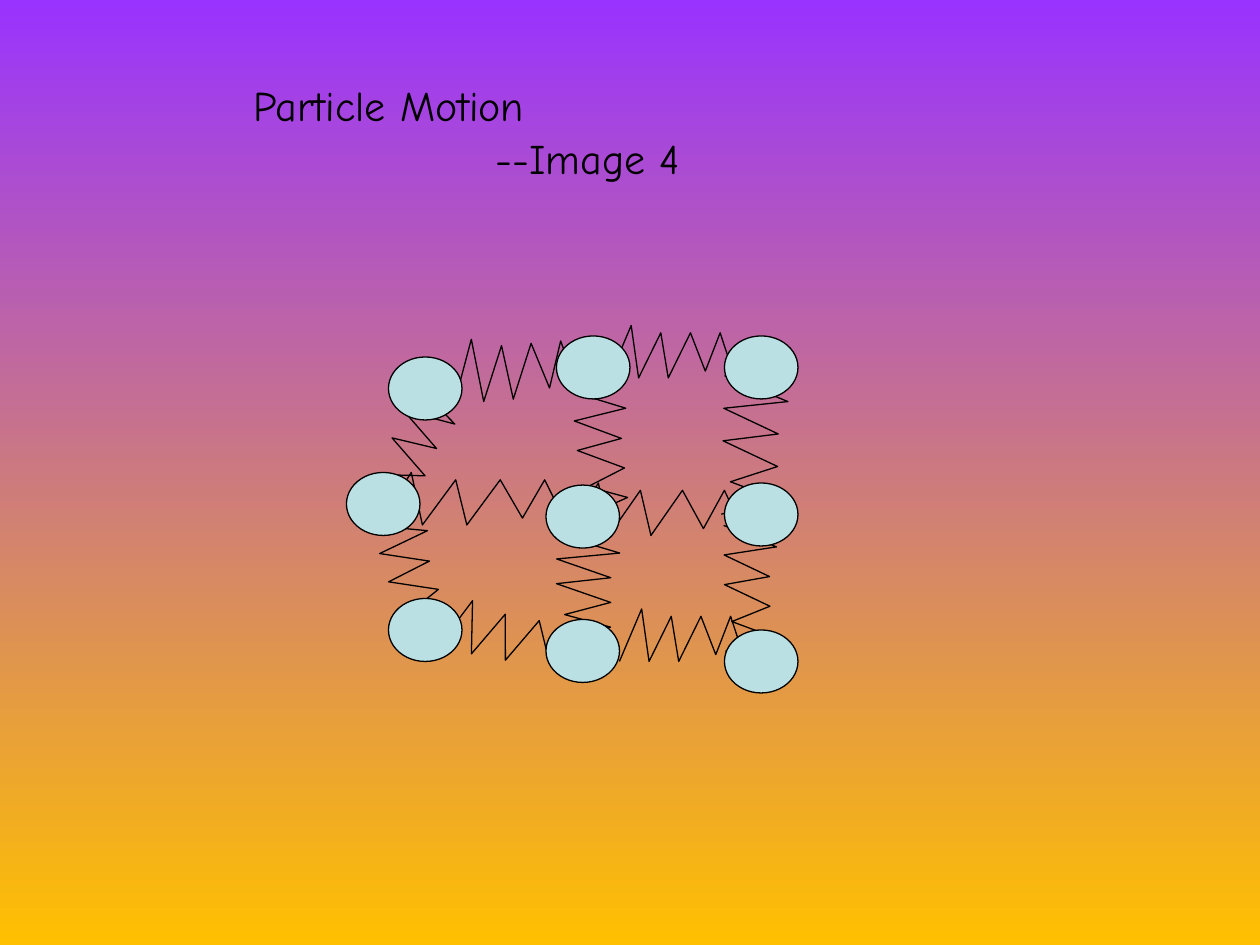
from pptx import Presentation
from pptx import util as u
from pptx.dml.color import RGBColor
from pptx.enum import shapes, text

COLORS = {"top": "9933FF", "bottom": "FFC000", "particle": "BBE0E3", "ink": "000000"}
COLUMNS, ROWS = 120, 90
ZIGZAG = [(0, 1), (3 / 17, 0), (4 / 17, 1), (7 / 17, 0.14), (8 / 17, 1),
          (11 / 17, 0.14), (13 / 17, 0.87), (15 / 17, 0.14), (1, 1)]
SPRINGS = [
    (43, 32, 12, 6, 355.4), (58, 31, 12, 5, 0),
    (36, 45, 18, 5, 0), (54, 46, 17, 5, 0),
    (42, 58, 14, 5, 10.6), (59, 58, 12, 5, 0),
    (33.5, 40.5, 12, 5, 112.8), (51.5, 40.5, 12, 5, 84.1), (65.3, 39.4, 13.2, 6.1, 91.3),
    (33.5, 52.5, 12, 5, 72.4), (51, 52.9, 10, 6, 90.3), (65.5, 53.5, 12, 5, 89.2),
]
PARTICLES = [(33, 45), (52, 46.2), (37, 57), (52, 59), (37, 34),
             (53, 32), (69, 32), (69, 46), (69, 60)]


def rgb(name):
    return RGBColor.from_string(COLORS[name])


def write(tf, words, size=24, font="Comic Neue", color="ink", align=text.PP_ALIGN.LEFT):
    p = tf.paragraphs[0]
    p.alignment = align
    r = p.add_run()
    r.text = words
    r.font.size = u.Pt(size)
    r.font.name = font
    r.font.color.rgb = rgb(color)


class Board:
    def __init__(self, prs):
        self.s = prs.slides.add_slide(prs.slide_layouts[6])
        self.column = prs.slide_width / COLUMNS
        self.row = prs.slide_height / ROWS
        self.line_width = u.Pt(0.75)

    def place(self, x, y):
        return round(x * self.column), round(y * self.row)

    def background(self, top, bottom):
        fill = self.s.background.fill
        fill.gradient()
        fill.gradient_angle = 270
        for stop, position, name in zip(fill.gradient_stops, (0, 1), (top, bottom)):
            stop.position = position
            stop.color.rgb = rgb(name)

    def outline(self, sp):
        sp.shadow.inherit = False
        sp.line.color.rgb = rgb("ink")
        sp.line.width = self.line_width

    def spring(self, x, y, w, h, angle):
        points = [self.place(x + w * dx, y + h * dy) for dx, dy in ZIGZAG]
        builder = self.s.shapes.build_freeform(*points[0])
        builder.add_line_segments(points[1:], close=False)
        sp = builder.convert_to_shape()
        sp.fill.background()
        sp.rotation = angle
        self.outline(sp)

    def particle(self, x, y, w=7, h=6):
        sp = self.s.shapes.add_shape(shapes.MSO_SHAPE.OVAL, *self.place(x, y), *self.place(w, h))
        sp.fill.solid()
        sp.fill.fore_color.rgb = rgb("particle")
        self.outline(sp)

    def label(self, words, x, y, w, h=6):
        tf = self.s.shapes.add_textbox(*self.place(x, y), *self.place(w, h)).text_frame
        tf.word_wrap = True
        tf.auto_size = text.MSO_AUTO_SIZE.SHAPE_TO_FIT_TEXT
        write(tf, words)


def main():
    prs = Presentation()
    prs.slide_width, prs.slide_height = u.Inches(10), u.Inches(7.5)
    board = Board(prs)
    board.background("top", "bottom")
    for spring in SPRINGS:
        board.spring(*spring)
    for particle in PARTICLES:
        board.particle(*particle)
    board.label("--Image 4", 46, 12, 38)
    board.label("Particle Motion", 23, 7, 65)
    prs.save("out.pptx")


if __name__ == "__main__":
    main()
